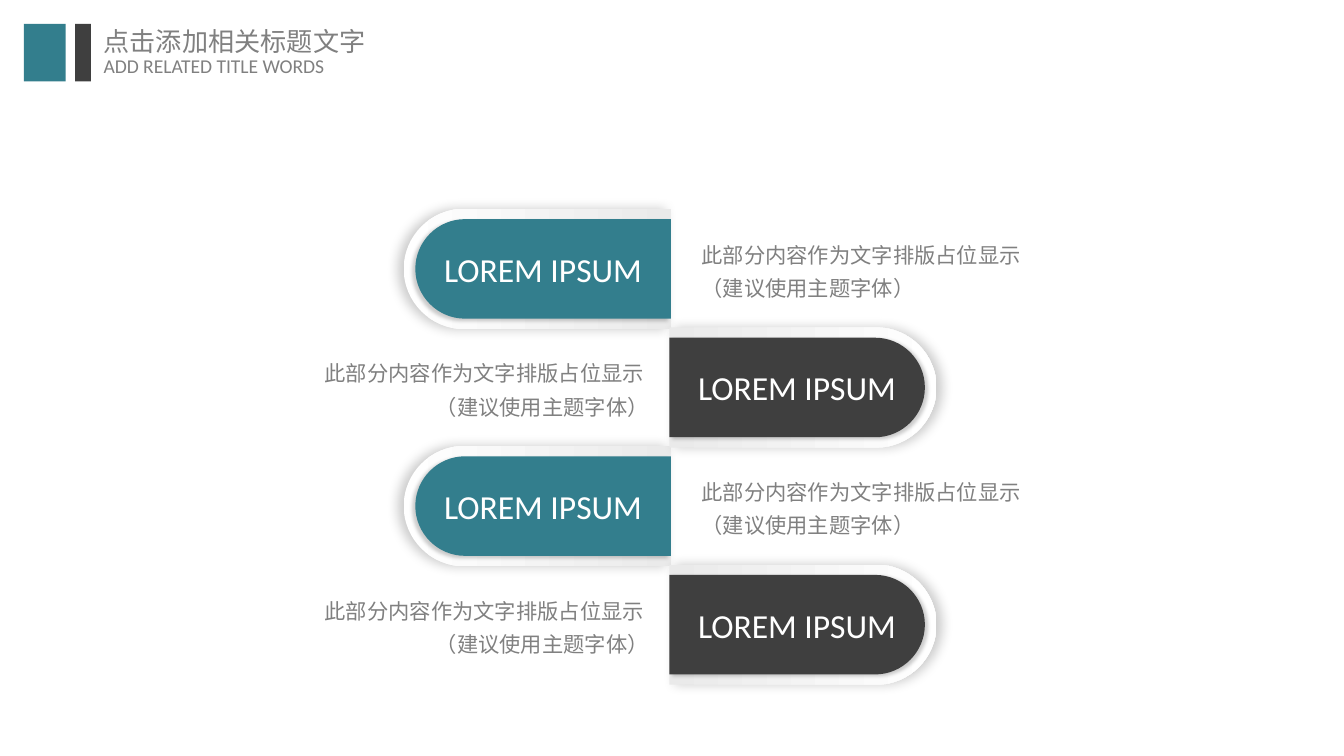
from dataclasses import dataclass

from lxml.etree import SubElement
from pptx import Presentation
from pptx.dml.color import RGBColor
from pptx.enum.shapes import MSO_SHAPE
from pptx.enum.text import MSO_ANCHOR, PP_ALIGN
from pptx.oxml.ns import qn
from pptx.util import Cm, Pt


@dataclass(frozen=True)
class Theme:
    teal: str = "337E8D"
    dark: str = "3F3F3F"
    gray: str = "808080"
    white: str = "FFFFFF"
    silver: str = "EAEAEA"
    latin: str = "Calibri"
    mono: str = "Courier New"
    cjk: str = "Noto Sans CJK SC"
    title: float = 14
    subtitle: float = 10.5
    body: float = 11.4
    label: float = 18


THEME = Theme()
FIRST_ROW = 5.08
ROW_PITCH = 2.24
ARC = 0.55
BODY = "此部分内容作为文字排版占位显示 \n（建议使用主题字体）"


def color(value):
    return RGBColor.from_string(value)


def style(p, size, font, fill, align=PP_ALIGN.LEFT):
    p.alignment = align
    p.font.size = Pt(size)
    p.font.name = font
    p.font.color.rgb = color(fill)


def add_bar(slide, x, width, fill):
    sp = slide.shapes.add_shape(MSO_SHAPE.RECTANGLE, Cm(x), Cm(0.45), Cm(width), Cm(1.09))
    sp.shadow.inherit = False
    sp.fill.solid()
    sp.fill.fore_color.rgb = color(fill)
    sp.line.fill.background()


def add_heading(slide, y, width, height, text, size, font):
    tf = slide.shapes.add_textbox(Cm(1.71), Cm(y), Cm(width), Cm(height)).text_frame
    tf.word_wrap = False
    tf.text = text
    style(tf.paragraphs[0], size, font, THEME.gray)


def add_body(slide, x, row, font, align):
    y = FIRST_ROW + row * ROW_PITCH - 0.94
    tf = slide.shapes.add_textbox(Cm(x), Cm(y), Cm(6.83), Cm(1.83)).text_frame
    tf.word_wrap = True
    tf.vertical_anchor = MSO_ANCHOR.MIDDLE
    tf.margin_left = tf.margin_right = tf.margin_top = tf.margin_bottom = 0
    p = tf.paragraphs[0]
    p.text = BODY
    p.line_spacing = 1.3
    style(p, THEME.body, font, THEME.gray, align)


def add_shadow(sp, blur, distance, angle):
    sp.shadow.inherit = False
    effects = sp._element.spPr.find(qn("a:effectLst"))
    shadow = SubElement(effects, qn("a:outerShdw"), blurRad=str(Pt(blur)),
                        dist=str(Pt(distance)), dir=str(angle * 60000),
                        algn="ctr", rotWithShape="0")
    black = SubElement(shadow, qn("a:srgbClr"), val="000000")
    SubElement(black, qn("a:alpha"), val="20000")


def curve_segments(sp, first):
    outline = next(sp._element.iter(qn("a:path")))
    lines = outline.findall(qn("a:lnTo"))[first:]
    for i in range(0, len(lines), 3):
        curve = SubElement(outline, qn("a:cubicBezTo"))
        lines[i].addprevious(curve)
        for line in lines[i:i + 3]:
            curve.append(line[0])
            outline.remove(line)


def add_half_pill(group, edge, cy, width, height, side):
    radius = height / 2
    tip = edge + side * width
    center = tip - side * radius
    shoulder = center + side * radius * ARC
    top, bottom = cy - radius, cy + radius
    corners = [(edge, top), (edge, bottom), (center, bottom)]
    curves = [
        (shoulder, bottom), (tip, cy + radius * ARC), (tip, cy),
        (tip, cy - radius * ARC), (shoulder, top), (center, top),
    ]
    builder = group.shapes.build_freeform(Cm(center), Cm(top), scale=1.0)
    builder.add_line_segments([(Cm(x), Cm(y)) for x, y in corners + curves], close=True)
    sp = builder.convert_to_shape()
    curve_segments(sp, len(corners))
    sp.line.fill.background()
    return sp


def add_tab(slide, row, side):
    edge = 12.68 if side < 0 else 12.65
    cy = FIRST_ROW + row * ROW_PITCH
    group = slide.shapes.add_group_shape()

    rim = add_half_pill(group, edge, cy, 5.05, 2.27, side)
    rim.fill.gradient()
    rim.fill.gradient_angle = 0
    shades = (THEME.white, THEME.silver)[::-side]
    for stop, shade in zip(rim.fill.gradient_stops, shades):
        stop.color.rgb = color(shade)
    add_shadow(rim, 6, 3, 180 if side < 0 else 0)

    face = add_half_pill(group, edge, cy, 4.83, 1.88, side)
    face.fill.solid()
    face.fill.fore_color.rgb = color(THEME.teal if side < 0 else THEME.dark)
    add_shadow(face, 2, 2, 150 if side < 0 else 30)
    tf = face.text_frame
    tf.vertical_anchor = MSO_ANCHOR.MIDDLE
    tf.text = "LOREM IPSUM"
    style(tf.paragraphs[0], THEME.label, THEME.latin, THEME.white, PP_ALIGN.CENTER)


def main():
    prs = Presentation()
    prs.slide_width, prs.slide_height = Cm(25.4), Cm(14.28)
    slide = prs.slides.add_slide(prs.slide_layouts[6])

    add_bar(slide, 0.45, 0.79, THEME.teal)
    add_bar(slide, 1.42, 0.3, THEME.dark)
    add_heading(slide, 0.36, 5.54, 0.86, "点击添加相关标题文字", THEME.title, THEME.cjk)
    add_heading(slide, 0.89, 5, 0.74, "ADD RELATED TITLE WORDS", THEME.subtitle, THEME.latin)

    for row in (0, 2):
        font = THEME.mono if row else THEME.latin
        add_body(slide, 13.26, row, font, PP_ALIGN.LEFT)
    for row in (1, 3):
        add_body(slide, 5.43, row, THEME.mono, PP_ALIGN.RIGHT)
    for row, side in ((0, -1), (2, -1), (1, 1), (3, 1)):
        add_tab(slide, row, side)

    prs.save("out.pptx")


if __name__ == "__main__":
    main()
